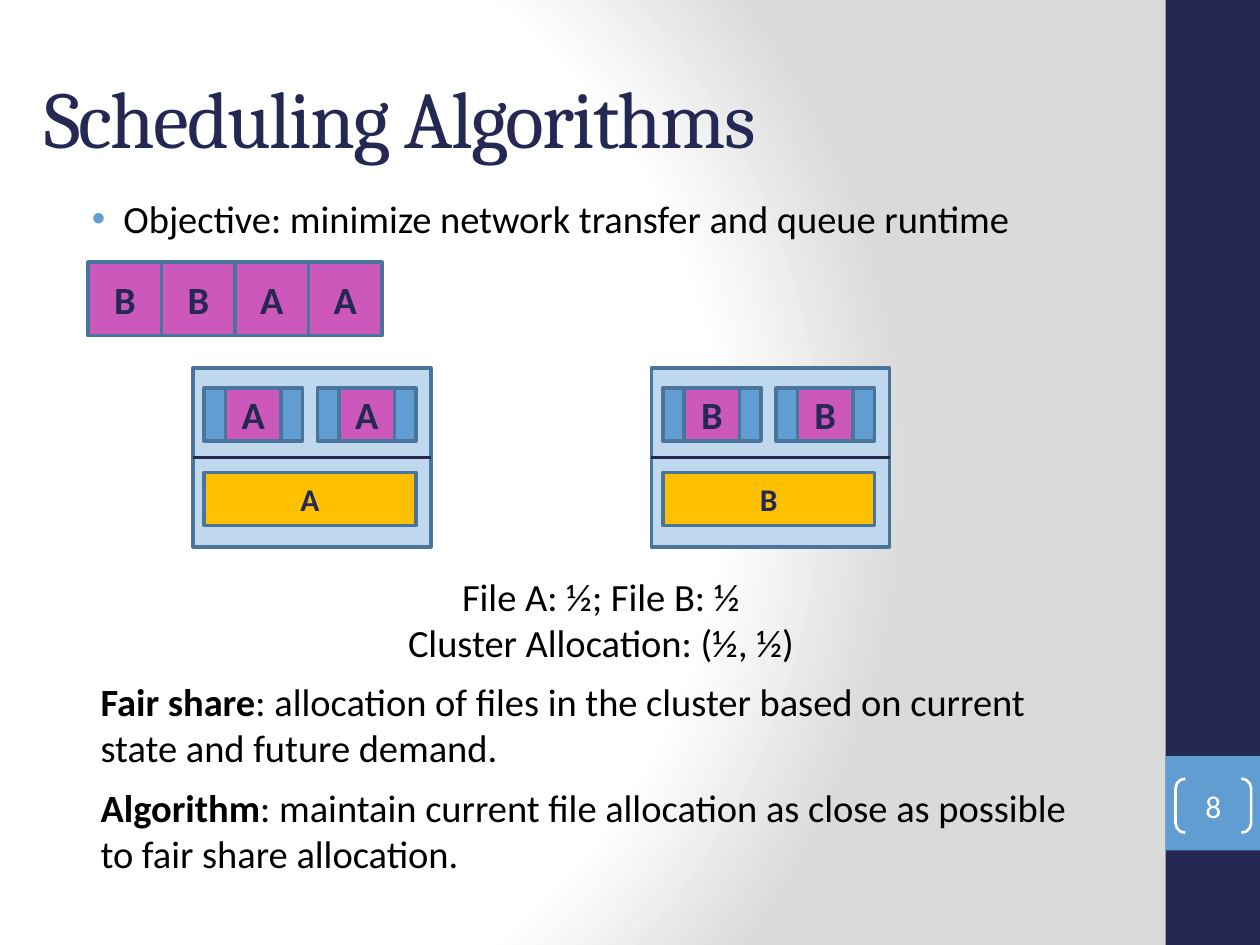
from lxml import etree
from pptx import Presentation
from pptx import oxml
from pptx.dml.color import RGBColor
from pptx.enum import shapes, text
from pptx.oxml.ns import qn
from pptx.util import Inches, Pt

COLORS = {
    "navy": "242852", "blue": "629DD1", "outline": "49749B", "pink": "CC58BB",
    "node": "C0D8ED", "gold": "FFC000", "black": "000000", "white": "FFFFFF",
    "gray": "DADADA",
}
RGB = {name: RGBColor.from_string(value) for name, value in COLORS.items()}
A_NS = "http://schemas.openxmlformats.org/drawingml/2006/main"


def add_text(p, words, size=22, color="black", font="Calibri", bold=False):
    r = p.add_run()
    r.text = words
    formats = {"size": Pt(size), "name": font, "bold": bold}
    for key, value in formats.items():
        setattr(r.font, key, value)
    r.font.color.rgb = RGB[color]
    return r


def add_box(x, y, w, h, fill, line="outline", label="", size=22):
    sp = s.shapes.add_shape(shapes.MSO_SHAPE.RECTANGLE,
                            Inches(x), Inches(y), Inches(w), Inches(h))
    sp.shadow.inherit = False
    sp.fill.solid()
    sp.fill.fore_color.rgb = RGB[fill]
    if line:
        sp.line.color.rgb = RGB[line]
        sp.line.width = Pt(2)
    else:
        sp.line.fill.background()
    if label:
        p = sp.text_frame.paragraphs[0]
        p.alignment = text.PP_ALIGN.CENTER
        add_text(p, label, size, "navy", bold=True)
    return sp


prs = Presentation()
prs.slide_width, prs.slide_height = Inches(10), Inches(7.5)
s = prs.slides.add_slide(prs.slide_layouts[1])

# Background: radial gradient
s.background.fill.gradient()
grad = s.element.find(".//" + qn("a:gradFill"))
stops = "".join(f'<a:gs pos="{pos}"><a:srgbClr val="{COLORS[name]}"/></a:gs>'
                for pos, name in ((0, "white"), (75000, "white"), (100000, "gray")))
grad.getparent().replace(grad, oxml.parse_xml(
    f'<a:gradFill xmlns:a="{A_NS}" rotWithShape="1"><a:gsLst>{stops}</a:gsLst>'
    '<a:path path="circle"><a:fillToRect l="20000" t="50000" r="100000" b="50000"/>'
    '</a:path></a:gradFill>'))

# Side bar and page number
add_box(9.25, 0, 0.75, 7.5, "navy", line=None)
add_box(9.25, 6, 0.75, 0.75, "blue", line=None)
number = s.shapes.add_shape(shapes.MSO_SHAPE.DOUBLE_BRACKET,
                            Inches(9.33), Inches(6.18), Inches(0.6), Inches(0.43))
number.adjustments[0] = 0.18
number.shadow.inherit = False
number.fill.background()
number.line.color.rgb = RGB["white"]
number.line.width = Pt(1.5)
tf = number.text_frame
for side in ("left", "top", "right", "bottom"):
    setattr(tf, f"margin_{side}", 0)
tf.vertical_anchor = text.MSO_ANCHOR.MIDDLE
tf.paragraphs[0].alignment = text.PP_ALIGN.CENTER
add_text(tf.paragraphs[0], "8", 18, "white")

# Title and objective
title, body = s.shapes.title, s.placeholders[1]
for sp, place, anchor in (
        (title, (0.25, 0.3, 8.75, 1.25), text.MSO_ANCHOR.MIDDLE),
        (body, (0.5, 1.5, 8.33, 0.58), text.MSO_ANCHOR.TOP)):
    for key, value in zip(("left", "top", "width", "height"), place):
        setattr(sp, key, Inches(value))
    sp.text_frame.auto_size = text.MSO_AUTO_SIZE.NONE
    sp.text_frame.vertical_anchor = anchor
    sp.text_frame.paragraphs[0].alignment = text.PP_ALIGN.LEFT

r = add_text(title.text_frame.paragraphs[0], "Scheduling Algorithms",
             46, "navy", "Cambria")
r.font._element.set("spc", "-100")

p = body.text_frame.paragraphs[0]
add_text(p, "Objective: minimize network transfer and queue runtime")
pPr = p._p.get_or_add_pPr()
pPr.set("marL", str(Inches(0.38)))
pPr.set("indent", str(Inches(-0.25)))
bullet_color = etree.SubElement(pPr, qn("a:buClr"))
etree.SubElement(bullet_color, qn("a:srgbClr"), val=COLORS["blue"])
etree.SubElement(pPr, qn("a:buFont"), typeface="Arial")
etree.SubElement(pPr, qn("a:buChar"), char="•")

# Queue of tasks, head at the right
QUEUE_LEFT, TASK = 0.7, 0.583
for i, name in reversed(list(enumerate("BBAA"))):
    add_box(QUEUE_LEFT + i * TASK, 2.08, TASK, TASK, "pink", label=name)

# Cluster nodes: two task slots above the stored file
for left, name in ((1.53, "A"), (5.17, "B")):
    node = add_box(left, 2.92, 1.89, 1.42, "node")
    divider = s.shapes.add_connector(shapes.MSO_CONNECTOR.STRAIGHT, 0, 0, 0, 0)
    divider.begin_connect(node, 1)
    divider.end_connect(node, 3)
    divider.line.color.rgb = RGB["navy"]
    divider.line.width = Pt(2)
    etree.SubElement(divider._element.spPr, qn("a:effectLst"))
    for slot in (left + 0.09, left + 0.99):
        add_box(slot, 3.08, 0.78, 0.42, "blue")
        add_box(slot + 0.17, 3.08, 0.44, 0.42, "pink", label=name)
    add_box(left + 0.09, 3.75, 1.68, 0.42, "gold", label=name, size=18)

# Explanations: each line is (bold lead, rest)
notes = (
    (4.5, 8.14, text.PP_ALIGN.CENTER, (("", "File A: ½; File B: ½"),
                                       ("", "Cluster Allocation: (½, ½)"))),
    (5.33, 7.89, text.PP_ALIGN.LEFT, (
        ("Fair share", ": allocation of files in the cluster based on current "
                       "state and future demand."),)),
    (6.17, 7.89, text.PP_ALIGN.LEFT, (
        ("Algorithm", ": maintain current file allocation as close as possible "
                      "to fair share allocation."),)),
)
for top, width, align, lines in notes:
    tf = s.shapes.add_textbox(Inches(0.7), Inches(top),
                              Inches(width), Inches(0.84)).text_frame
    tf.word_wrap = True
    tf.auto_size = text.MSO_AUTO_SIZE.SHAPE_TO_FIT_TEXT
    for i, (lead, rest) in enumerate(lines):
        p = tf.add_paragraph() if i else tf.paragraphs[0]
        p.alignment = align
        if lead:
            add_text(p, lead, bold=True)
        add_text(p, rest)

prs.save("out.pptx")
